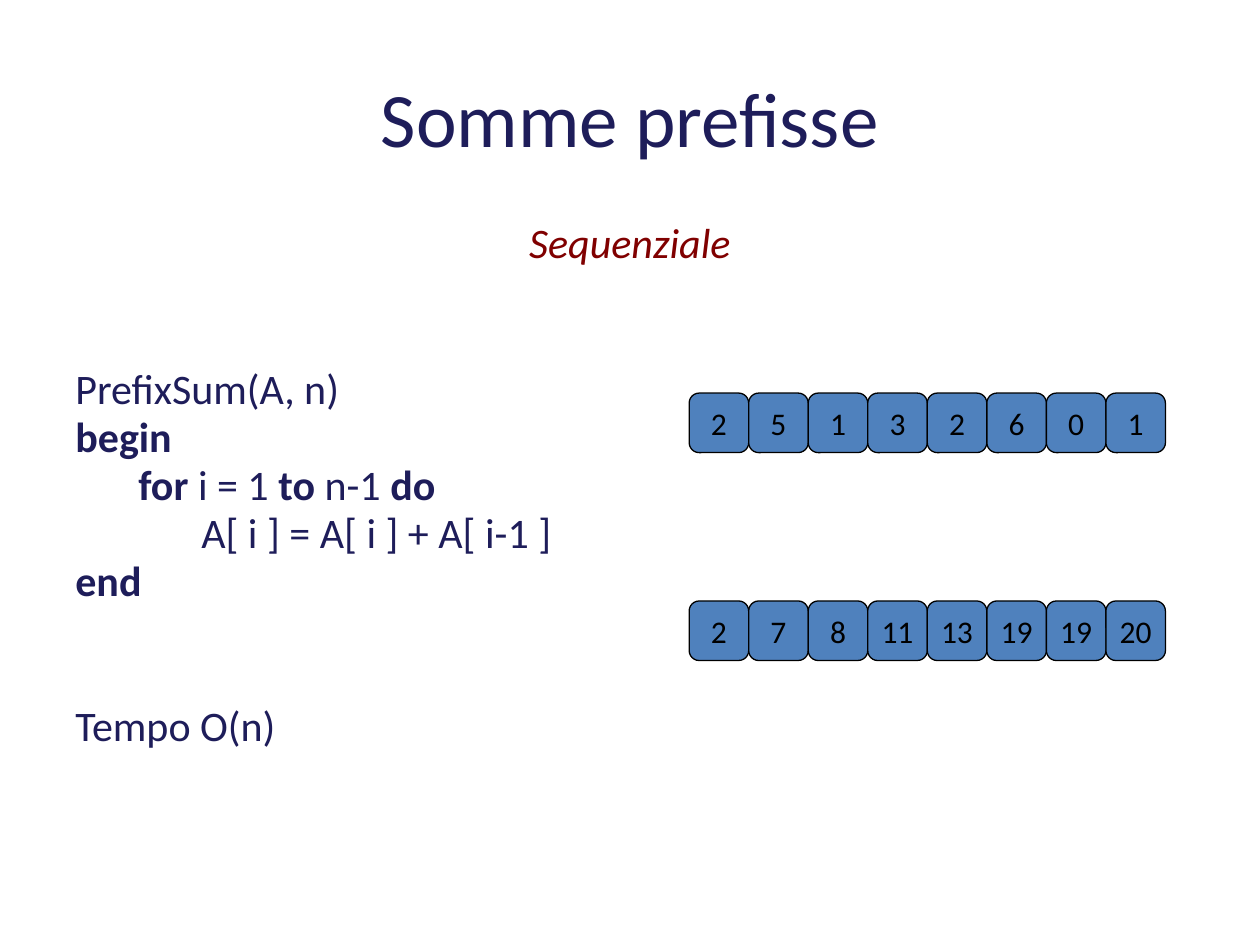
from dataclasses import dataclass

from pptx import Presentation
from pptx.dml.color import RGBColor
from pptx.enum.shapes import MSO_SHAPE
from pptx.enum.text import MSO_ANCHOR, PP_ALIGN
from pptx.util import Inches, Pt

ROUNDED = MSO_SHAPE.ROUNDED_RECTANGLE
TOP, MIDDLE = MSO_ANCHOR.TOP, MSO_ANCHOR.MIDDLE
LEFT, CENTER = PP_ALIGN.LEFT, PP_ALIGN.CENTER


@dataclass(frozen=True)
class Theme:
    font: str = "Calibri"
    navy: str = "1E1D5A"
    maroon: str = "800000"
    black: str = "000000"
    cell_fill: str = "4F81BD"
    title_size: float = 44
    body_size: float = 24
    cell_size: float = 18
    line_spacing: float = 0.8
    gap: float = 4.4
    section_gap: float = 60


THEME = Theme()


@dataclass(frozen=True)
class Span:
    text: str
    bold: bool = False
    italic: bool = False
    color: str = THEME.navy


@dataclass(frozen=True)
class Line:
    spans: tuple[Span, ...]
    level: int = 0
    before: float = THEME.gap
    align: int = LEFT


@dataclass(frozen=True)
class ArrayRow:
    top: float
    values: tuple[int, ...]


BODY = (
    Line((Span("Sequenziale", italic=True, color=THEME.maroon),), align=CENTER),
    Line((Span("PrefixSum(A, n)"),), before=THEME.section_gap),
    Line((Span("begin", bold=True),)),
    Line((Span("for", bold=True), Span(" i = 1 "), Span("to", bold=True),
          Span(" n-1 "), Span("do", bold=True)), level=1),
    Line((Span("A[ i ] = A[ i ] + A[ i-1 ]"),), level=2),
    Line((Span("end", bold=True),)),
    Line((Span("Tempo O(n)"),), before=THEME.section_gap),
)
ROWS = (
    ArrayRow(3.12, (2, 5, 1, 3, 2, 6, 0, 1)),
    ArrayRow(4.77, (2, 7, 8, 11, 13, 19, 19, 20)),
)
ROW_LEFT, ROW_WIDTH = 5.47, 3.78
INDENT = 0.5


def apply(target, formats: dict) -> None:
    for name, value in formats.items():
        setattr(target, name, value)


def add_span(p, span: Span, size: float) -> None:
    r = p.add_run()
    r.text = span.text
    apply(r.font, {"name": THEME.font, "size": Pt(size),
                   "bold": span.bold, "italic": span.italic})
    r.font.color.rgb = RGBColor.from_string(span.color)


def add_text(s, box: tuple[float, ...], anchor: int):
    tf = s.shapes.add_textbox(*map(Inches, box)).text_frame
    apply(tf, {"word_wrap": True, "vertical_anchor": anchor})
    return tf


def draw_title(s, text: str) -> None:
    p = add_text(s, (0.5, 0.3, 9, 1.25), MIDDLE).paragraphs[0]
    p.alignment = CENTER
    add_span(p, Span(text), THEME.title_size)


def draw_body(s, lines: tuple[Line, ...]) -> None:
    tf = add_text(s, (0.5, 1.75, 9, 4.95), TOP)
    for i, line in enumerate(lines):
        p = tf.add_paragraph() if i else tf.paragraphs[0]
        apply(p, {"alignment": line.align, "space_before": Pt(line.before),
                  "line_spacing": THEME.line_spacing})
        if line.level:
            p._p.get_or_add_pPr().set("marL", str(Inches(INDENT * line.level)))
        for span in line.spans:
            add_span(p, span, THEME.body_size)


def draw_row(s, row: ArrayRow) -> None:
    group = s.shapes.add_group_shape()
    side = ROW_WIDTH / len(row.values)
    for i, value in enumerate(row.values):
        box = (ROW_LEFT + i * side, row.top, side, side)
        sp = group.shapes.add_shape(ROUNDED, *map(Inches, box))
        sp.shadow.inherit = False
        sp.fill.solid()
        sp.fill.fore_color.rgb = RGBColor.from_string(THEME.cell_fill)
        sp.line.color.rgb = RGBColor.from_string(THEME.black)
        sp.line.width = Pt(0.75)
        tf = sp.text_frame
        apply(tf, {"word_wrap": False, "vertical_anchor": MIDDLE})
        p = tf.paragraphs[0]
        p.alignment = CENTER
        add_span(p, Span(str(value), color=THEME.black), THEME.cell_size)


def main() -> None:
    prs = Presentation()
    apply(prs, {"slide_width": Inches(10), "slide_height": Inches(7.5)})
    s = prs.slides.add_slide(prs.slide_layouts[6])
    draw_title(s, "Somme prefisse")
    draw_body(s, BODY)
    for row in ROWS:
        draw_row(s, row)
    prs.save("out.pptx")


if __name__ == "__main__":
    main()
